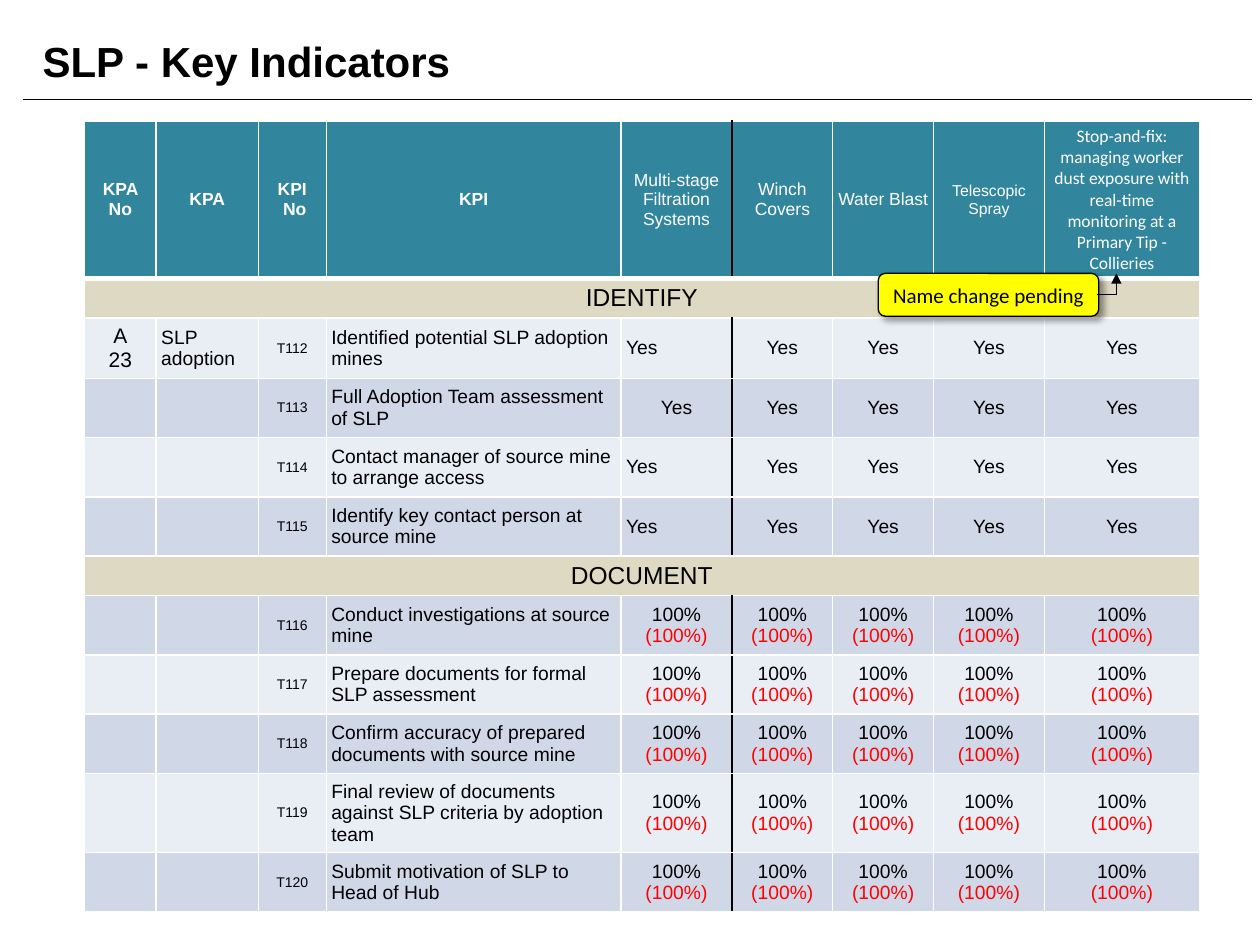
"""Build the SLP key indicators slide: title, indicator table and a callout."""
from lxml.etree import SubElement
from pptx import Presentation
from pptx.dml.color import RGBColor
from pptx.enum.shapes import MSO_CONNECTOR, MSO_SHAPE
from pptx.enum.text import MSO_ANCHOR, PP_ALIGN
from pptx.oxml.ns import qn
from pptx.util import Inches, Pt

COLOURS = {
    "black": "000000", "white": "FFFFFF", "red": "FF0000", "yellow": "FFFF00",
    "header": "31859C", "band": "DDD9C3", "light": "E9EDF4", "dark": "D0D8E8",
}
WIDTH, HEIGHT = Inches(10), Inches(7.5)
LEFT, CENTRE = PP_ALIGN.LEFT, PP_ALIGN.CENTER


def grid(*shares):
    """Turn alternating percentages of slide width and height into lengths."""
    return [int((HEIGHT if i % 2 else WIDTH) * share / 100) for i, share in enumerate(shares)]


def write(frame, paragraphs, size, align=CENTRE, colour="black", bold=False, font="Arial"):
    """Write paragraphs; each is a text or a list of (text, colour) spans."""
    for index, spans in enumerate(paragraphs):
        para = frame.paragraphs[0] if index == 0 else frame.add_paragraph()
        para.alignment = align
        for text, shade in [(spans, colour)] if isinstance(spans, str) else spans:
            span = para.add_run()
            span.text = text
            span.font.size, span.font.bold, span.font.name = Pt(size), bold, font
            span.font.color.rgb = RGBColor.from_string(COLOURS[shade])


deck = Presentation()
deck.slide_width, deck.slide_height = WIDTH, HEIGHT
page = deck.slides.add_slide(deck.slide_layouts[6])

rule = page.shapes.add_connector(MSO_CONNECTOR.STRAIGHT, *grid(1.8, 10.53, 99.4, 10.53))
title = page.shapes.add_textbox(*grid(2.4, 2.27, 98.4, 8.4)).text_frame
title.word_wrap = True
title.vertical_anchor = MSO_ANCHOR.MIDDLE
write(title, ["SLP - Key Indicators"], 24, LEFT, bold=True)

headings = [
    (["KPA No"], 10, True, "Arial"),
    (["KPA"], 10, True, "Arial"),
    (["KPI", " No"], 10, True, "Arial"),
    (["KPI"], 10, True, "Arial"),
    (["Multi-stage Filtration Systems"], 10, False, "Arial"),
    (["Winch Covers"], 10, False, "Arial"),
    (["Water Blast"], 10, False, "Arial"),
    (["Telescopic Spray"], 9, False, "Arial"),
    (["Stop-and-fix: managing worker dust exposure with real-time monitoring "
      "at a Primary Tip - Collieries"], 10, False, "Calibri"),
]
bands = {1: "IDENTIFY", 6: "DOCUMENT"}
indicators = [
    "Identified potential SLP adoption mines",
    "Full Adoption Team assessment of SLP",
    "Contact manager of source mine to arrange access",
    "Identify key contact person at source mine",
    "Conduct investigations at source mine",
    "Prepare documents for formal SLP assessment",
    "Confirm accuracy of prepared documents with source mine",
    "Final review of documents against SLP criteria by adoption team",
    "Submit motivation of SLP to Head of Hub",
]
column_shares = [5.7, 8.1, 5.4, 23.4, 8.8, 8, 8, 8.8, 12.3]
row_shares = [16.67, 3.93] + [6.27] * 4 + [3.93] + [6.27] * 3 + [7.87, 6.27]
table = page.shapes.add_table(
    len(row_shares), len(column_shares),
    *grid(6.7, 12.8, sum(column_shares), sum(row_shares))).table
table.first_row = table.horz_banding = False
for column, share in zip(table.columns, column_shares):
    column.width = grid(share)[0]
for row, share in zip(table.rows, row_shares):
    row.height = grid(0, share)[1]

for r in range(len(row_shares)):
    for c in range(len(column_shares)):
        cell = table.cell(r, c)
        cell.vertical_anchor = MSO_ANCHOR.MIDDLE
        cell.margin_left = cell.margin_right = cell.margin_top = cell.margin_bottom = Inches(0.04)
        for side in "LRTB":
            divider = r not in bands and (c, side) in [(4, "R"), (5, "L")]
            thick = (r, side) in [(0, "B"), (1, "T")]
            edge = SubElement(cell._tc.get_or_add_tcPr(), qn(f"a:ln{side}"), w=str(Pt(3 if thick else 1)))
            paint = SubElement(edge, qn("a:solidFill"))
            SubElement(paint, qn("a:srgbClr"), val=COLOURS["black" if divider else "white"])
        shade = "header" if r == 0 else "band" if r in bands else "dark" if r % 2 else "light"
        cell.fill.solid()
        cell.fill.fore_color.rgb = RGBColor.from_string(COLOURS[shade])

for c, (lines, size, bold, font) in enumerate(headings):
    write(table.cell(0, c).text_frame, lines, size, CENTRE, "white", bold, font)
for r, name in bands.items():
    table.cell(r, 0).merge(table.cell(r, len(column_shares) - 1))
    write(table.cell(r, 0).text_frame, [name], 14)
write(table.cell(2, 0).text_frame, ["A", "23"], 12)
write(table.cell(2, 1).text_frame, ["SLP adoption"], 11, LEFT)

indicator_rows = [r for r in range(1, len(row_shares)) if r not in bands]
for number, (r, indicator) in enumerate(zip(indicator_rows, indicators), 112):
    write(table.cell(r, 2).text_frame, [f"T{number}"], 8)
    write(table.cell(r, 3).text_frame, [indicator], 11, LEFT)
    for c in range(4, len(column_shares)):
        if r < 6:
            score = ["Yes"]
        elif c < 6:
            score = [[("100% ", "black"), ("(100%)", "red")]]
        else:
            score = ["100%", [("(100%)", "red")]]
        align = LEFT if c == 4 and r in (2, 4, 5) else CENTRE
        write(table.cell(r, c).text_frame, score, 11, align)

callout = page.shapes.add_shape(MSO_SHAPE.ROUNDED_RECTANGLE, *grid(69.7, 28.93, 17.5, 4.53))
callout.fill.solid()
callout.fill.fore_color.rgb = RGBColor.from_string(COLOURS["yellow"])
callout.shadow.inherit = False
shadow = SubElement(callout._element.spPr.find(qn("a:effectLst")), qn("a:outerShdw"),
                    blurRad=str(Pt(4)), dist=str(Pt(3)), dir="2700000", algn="tl", rotWithShape="0")
tint = SubElement(shadow, qn("a:srgbClr"), val=COLOURS["black"])
SubElement(tint, qn("a:alpha"), val="40000")
callout.text_frame.word_wrap = False
callout.text_frame.vertical_anchor = MSO_ANCHOR.MIDDLE
write(callout.text_frame, ["Name change pending"], 12, font="Calibri")

arrow = page.shapes.add_connector(MSO_CONNECTOR.ELBOW, *grid(87.1, 31.2, 88.6, 28.93))
arrow._element.spPr.find(qn("a:prstGeom")).set("prst", "bentConnector2")
for stroke in (rule, callout, arrow):
    stroke.line.width = Pt(0.75)
    stroke.line.color.rgb = RGBColor.from_string(COLOURS["black"])
for connector in (rule, arrow):
    SubElement(connector._element.spPr, qn("a:effectLst"))
SubElement(arrow.line._get_or_add_ln(), qn("a:tailEnd"), type="triangle")

deck.save("out.pptx")
